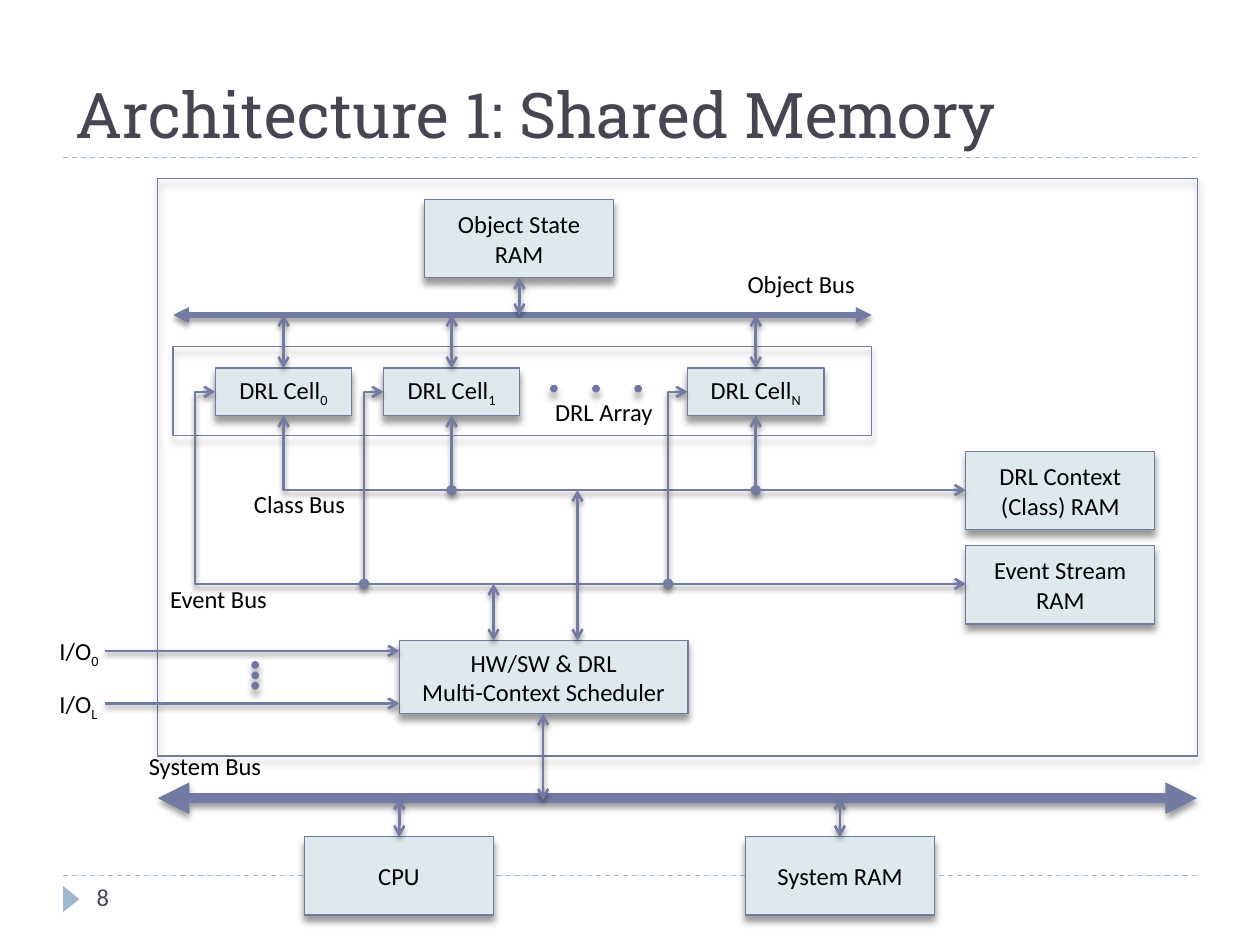
from dataclasses import dataclass

from lxml import etree
from pptx import Presentation
from pptx.dml.color import RGBColor
from pptx.enum import dml, shapes, text
from pptx.oxml import ns
from pptx.util import Cm, Pt

BLUE = RGBColor(0x72, 0x7C, 0xA3)
PALE = RGBColor(0xDD, 0xE9, 0xEC)
DOT = RGBColor(0x6B, 0x75, 0x9E)
RULE = RGBColor(0x9F, 0xB8, 0xCD)
INK = RGBColor(0x46, 0x46, 0x53)
BLACK = RGBColor(0, 0, 0)
KIND = shapes.MSO_SHAPE
LINK = shapes.MSO_CONNECTOR
LEFT, MID = text.PP_ALIGN.LEFT, text.PP_ALIGN.CENTER


@dataclass
class Box:
    x: float
    y: float
    w: float = 3.81
    h: float = 1.58
    label: str = ""


@dataclass
class Wire:
    x1: float
    y1: float
    x2: float
    y2: float
    head: str = "arrow"
    tail: str = "arrow"
    width: float = 1.5
    bend: str = ""
    adj: int = 0


def add(parent, tag: str, **attrs):
    return etree.SubElement(parent, ns.qn(tag), **attrs)


def shade(shape, blur: float, dist: float) -> None:
    props = shape._element.spPr
    for old in props.findall(ns.qn("a:effectLst")):
        props.remove(old)
    group = add(props, "a:effectLst")
    if blur:
        glow = add(group, "a:outerShdw", blurRad=str(Pt(blur)), dist=str(Pt(dist)),
                   dir="5400000", rotWithShape="0")
        add(add(glow, "a:srgbClr", val="000000"), "a:alpha", val="40000")


def write(frame, words: str, size: float = 14, font: str = "Calibri",
          color: RGBColor = BLACK, align=LEFT, anchor=text.MSO_ANCHOR.TOP) -> None:
    frame.word_wrap = True
    frame.vertical_anchor = anchor
    for i, row in enumerate(words.split("\n")):
        para = frame.add_paragraph() if i else frame.paragraphs[0]
        para.alignment = align
        main, _, sub = row.partition("_")
        for part in filter(None, (main, sub)):
            run = para.add_run()
            run.text = part
            run.font.size, run.font.name = Pt(size), font
            run.font.color.rgb = color
        if sub:
            run._r.get_or_add_rPr().set("baseline", "-25000")


def block(slide, box: Box, fill=PALE, kind=KIND.RECTANGLE) -> None:
    shape = slide.shapes.add_shape(kind, Cm(box.x), Cm(box.y), Cm(box.w), Cm(box.h))
    if fill is None:
        shape.fill.background()
    else:
        shape.fill.solid()
        shape.fill.fore_color.rgb = fill
    shape.line.color.rgb = BLUE
    shape.line.width = Pt(0.75)
    shade(shape, 4, 3.4)
    if box.label:
        write(shape.text_frame, box.label, align=MID, anchor=text.MSO_ANCHOR.MIDDLE)


def label(slide, box: Box, **fmt) -> None:
    area = slide.shapes.add_textbox(Cm(box.x), Cm(box.y), Cm(box.w), Cm(box.h))
    write(area.text_frame, box.label, **fmt)


def wire(slide, item: Wire) -> None:
    kind = LINK.ELBOW if item.bend else LINK.STRAIGHT
    line = slide.shapes.add_connector(kind, Cm(item.x1), Cm(item.y1), Cm(item.x2), Cm(item.y2))
    line.line.color.rgb = BLUE
    line.line.width = Pt(item.width)
    edge = line.line._get_or_add_ln()
    for tag, end in (("a:headEnd", item.head), ("a:tailEnd", item.tail)):
        add(edge, tag, type=end)
    if item.bend:
        geom = line._element.spPr.find(ns.qn("a:prstGeom"))
        geom.set("prst", item.bend)
        if item.adj:
            add(geom.find(ns.qn("a:avLst")), "a:gd", name="adj1", fmla=f"val {item.adj}")
    shade(line, 3, 2)


def rule(slide, y: float) -> None:
    line = slide.shapes.add_connector(LINK.STRAIGHT, Cm(1.27), Cm(y), Cm(24.13), Cm(y))
    line.line.color.rgb = RULE
    line.line.width = Pt(0.75)
    line.line.dash_style = dml.MSO_LINE.DASH
    shade(line, 0, 0)


def trim(slide) -> None:
    rule(slide, 17.65)
    rule(slide, 3.18)
    mark = slide.shapes.add_shape(KIND.ISOSCELES_TRIANGLE, Cm(1.17), Cm(17.96), Cm(0.53), Cm(0.33))
    mark.rotation = 90
    mark.fill.solid()
    mark.fill.fore_color.rgb = RULE
    mark.line.fill.background()
    mark.shadow.inherit = False
    head = slide.shapes.title
    head.left, head.top, head.width, head.height = Cm(1.27), Cm(0.43), Cm(22.86), Cm(2.74)
    write(head.text_frame, "Architecture 1: Shared Memory", size=36, font="Roboto Slab",
          color=INK, anchor=text.MSO_ANCHOR.BOTTOM)
    label(slide, Box(1.7, 17.65, 5.51, 1.02, "8"), color=INK)


def main() -> None:
    deck = Presentation()
    deck.slide_width, deck.slide_height = Cm(25.4), Cm(19.05)
    slide = deck.slides.add_slide(deck.slide_layouts[5])
    trim(slide)

    top, low, bus, sys = 7.42, 8.38, 6.35, 16.09
    cls, evt, ram = 9.88, 11.77, 19.47
    cells = [Box(x, top, 2.75, 0.96, f"DRL Cell_{n}")
             for x, n in ((4.34, "0"), (7.73, "1"), (13.86, "N"))]

    block(slide, Box(3.18, 3.6, 20.96, 11.64), fill=None)
    for box in (Box(6.14, 16.87, label="CPU"),
                Box(15.03, 16.87, label="System RAM"),
                Box(8.05, 12.91, 5.82, 1.48, "HW/SW & DRL\nMulti-Context Scheduler"),
                Box(ram, 11, label="Event Stream RAM"),
                Box(ram, 9.1, label="DRL Context (Class) RAM"),
                *cells,
                Box(8.56, 4.02, label="Object State RAM")):
        block(slide, box)
    block(slide, Box(3.49, 6.98, 14.08, 1.8), fill=None)

    spots = [(11.1 + 0.85 * i, 7.77) for i in range(3)]
    spots += [(5.08, 13.34 + 0.21 * i) for i in range(3)]
    for x, y in spots:
        block(slide, Box(x, y, 0.13, 0.13), fill=DOT, kind=KIND.OVAL)

    wires = [
        Wire(3.18, sys, 24.13, sys, "triangle", "triangle", 6),
        Wire(3.49, bus, 17.57, bus, "triangle", "triangle", 3),
        Wire(4.34, 7.9, ram, evt, bend="bentConnector3", adj=-2700),
        Wire(ram, cls, 5.72, low, bend="bentConnector2"),
        Wire(10.95, 14.39, 10.95, 16.13),
        Wire(8.05, 16.87, 8.05, sys),
        Wire(16.93, 16.87, 16.93, sys),
        Wire(9.95, evt, 9.95, 12.91),
        Wire(11.64, cls, 11.64, 12.91),
        Wire(2.12, 13.12, 8.05, 13.12, "none"),
        Wire(2.12, 14.18, 8.05, 14.18, "none"),
        Wire(10.47, 5.6, 10.47, bus),
    ]
    for i, cell in enumerate(cells):
        mid = cell.x + cell.w / 2
        wires.append(Wire(mid, top, mid, bus))
        if i:
            wires.append(Wire(cell.x, 7.9, cell.x - 0.39, evt, tail="oval", bend="bentConnector2"))
            wires.append(Wire(mid, cls, mid, low, "oval"))
    for item in wires:
        wire(slide, item)

    label(slide, Box(10.48, 7.87, 3.39, 0.86, "DRL Array"), align=MID)
    for x, y, w, name in ((14.82, 5.29, 2.75, "Object Bus"),
                          (2.75, 15.01, 3.6, "System Bus"),
                          (4.87, 9.74, 3.18, "Class Bus"),
                          (3.18, 11.64, 3.18, "Event Bus"),
                          (0.95, 12.7, 1.6, "I/O_0"),
                          (0.95, 13.76, 1.6, "I/O_L")):
        label(slide, Box(x, y, w, 0.86, name))

    deck.save("out.pptx")


if __name__ == "__main__":
    main()
